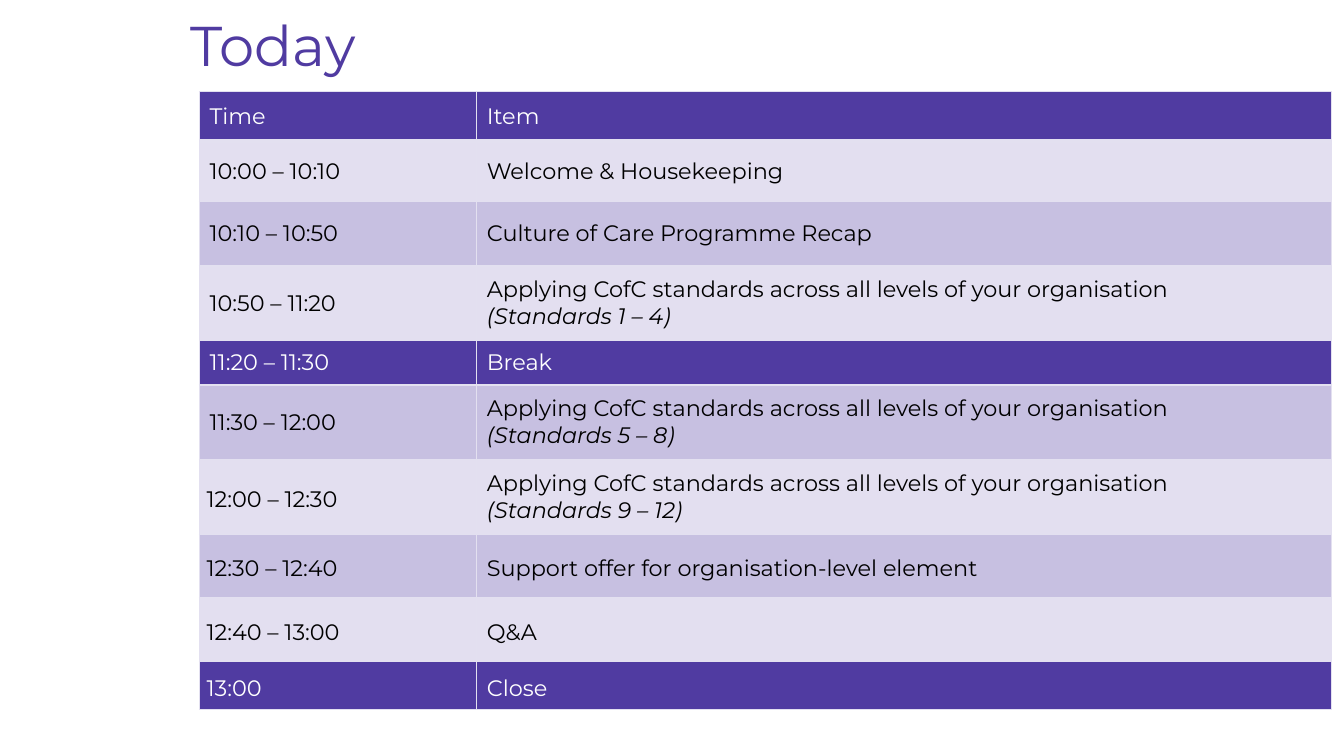
import itertools
import pptx
import pptx.dml.color
import pptx.enum.text
import pptx.oxml
import pptx.oxml.ns
import pptx.util

Pt = pptx.util.Pt
MIDDLE = pptx.enum.text.MSO_ANCHOR.MIDDLE
theme = {
    "font": "Montserrat", "title": 40, "body": 16,
    "purple": "503BA1", "light": "E3DFF0", "mid": "C7C0E1",
    "rule": "E3E0F0", "white": "FFFFFF", "black": "000000",
}


def add_run(p, text, size, color, italic=False):
    r = p.add_run()
    r.text = text
    r.font.name = theme["font"]
    r.font.size = Pt(theme[size])
    r.font.bold = False
    r.font.italic = italic
    r.font.color.rgb = pptx.dml.color.RGBColor.from_string(theme[color])


def add_border(cell, side, width):
    cell._tc.get_or_add_tcPr().append(pptx.oxml.parse_xml(
        f'<a:{side} {pptx.oxml.ns.nsdecls("a")} w="{Pt(width)}"><a:solidFill>'
        f'<a:srgbClr val="{theme["rule"]}"/></a:solidFill></a:{side}>'))


prs = pptx.Presentation()
prs.slide_width = pptx.util.Inches(13.33)
prs.slide_height = pptx.util.Inches(7.5)
col, row = prs.slide_width / 100, prs.slide_height / 100
s = prs.slides.add_slide(prs.slide_layouts[5])

title = s.shapes.title
title.left, title.top = int(13.43 * col), int(2.4 * row)
title.width, title.height = int(77.34 * col), int(8 * row)
tf = title.text_frame
tf.auto_size = pptx.enum.text.MSO_AUTO_SIZE.NONE
tf.vertical_anchor = MIDDLE
p = tf.paragraphs[0]
p.alignment = pptx.enum.text.PP_ALIGN.LEFT
p.line_spacing = 0.9
add_run(p, "Today", "title", "purple")

standards = "Applying CofC standards across all levels of your organisation"
agenda = [
    ("Time", "Item", "", 6.53, "band"),
    ("10:00 – 10:10", "Welcome & Housekeeping", "", 8, "talk"),
    ("10:10 – 10:50", "Culture of Care Programme Recap", "", 8.53, "talk"),
    ("10:50 – 11:20", standards, "(Standards 1 – 4)", 9.87, "talk"),
    ("11:20 – 11:30", "Break", "", 5.87, "band"),
    ("11:30 – 12:00", standards, "(Standards 5 – 8)", 9.87, "talk"),
    ("12:00 – 12:30", standards, "(Standards 9 – 12)", 9.87, "talk"),
    ("12:30 – 12:40", "Support offer for organisation-level element", "", 8.4, "talk"),
    ("12:40 – 13:00", "Q&A", "", 8.4, "talk"),
    ("13:00", "Close", "", 6.4, "band"),
]
first_loose_row = 6
col_shares = (20.63, 63.62)
table = s.shapes.add_table(
    len(agenda), 2, int(14.85 * col), int(12.13 * row),
    int(sum(col_shares) * col), int(sum(a[3] for a in agenda) * row)).table
for column, share in zip(table.columns, col_shares):
    column.width = int(share * col)

talk_fills = itertools.cycle(("light", "mid"))
for i, (time, item, detail, share, kind) in enumerate(agenda):
    table.rows[i].height = int(share * row)
    fill = "purple" if kind == "band" else next(talk_fills)
    color = "white" if kind == "band" else "black"
    for j, text in enumerate((time, item)):
        cell = table.cell(i, j)
        cell.vertical_anchor = MIDDLE
        for side in ("lnL", "lnR", "lnT", "lnB"):
            add_border(cell, side, 3 if i == 0 and side == "lnB" else 1)
        cell.fill.solid()
        cell.fill.fore_color.rgb = pptx.dml.color.RGBColor.from_string(theme[fill])
        p = cell.text_frame.paragraphs[0]
        if i >= first_loose_row and not (j and detail):
            p.line_spacing = 1.2
            p.space_after = Pt(8)
        if i >= first_loose_row and j == 0:
            cell.margin_left = cell.margin_right = pptx.util.Inches(0.07)
            cell.margin_top = cell.margin_bottom = 0
        add_run(p, text, "body", color)
        if j and detail:
            p.add_line_break()
            add_run(p, detail, "body", color, italic=True)

prs.save("out.pptx")
